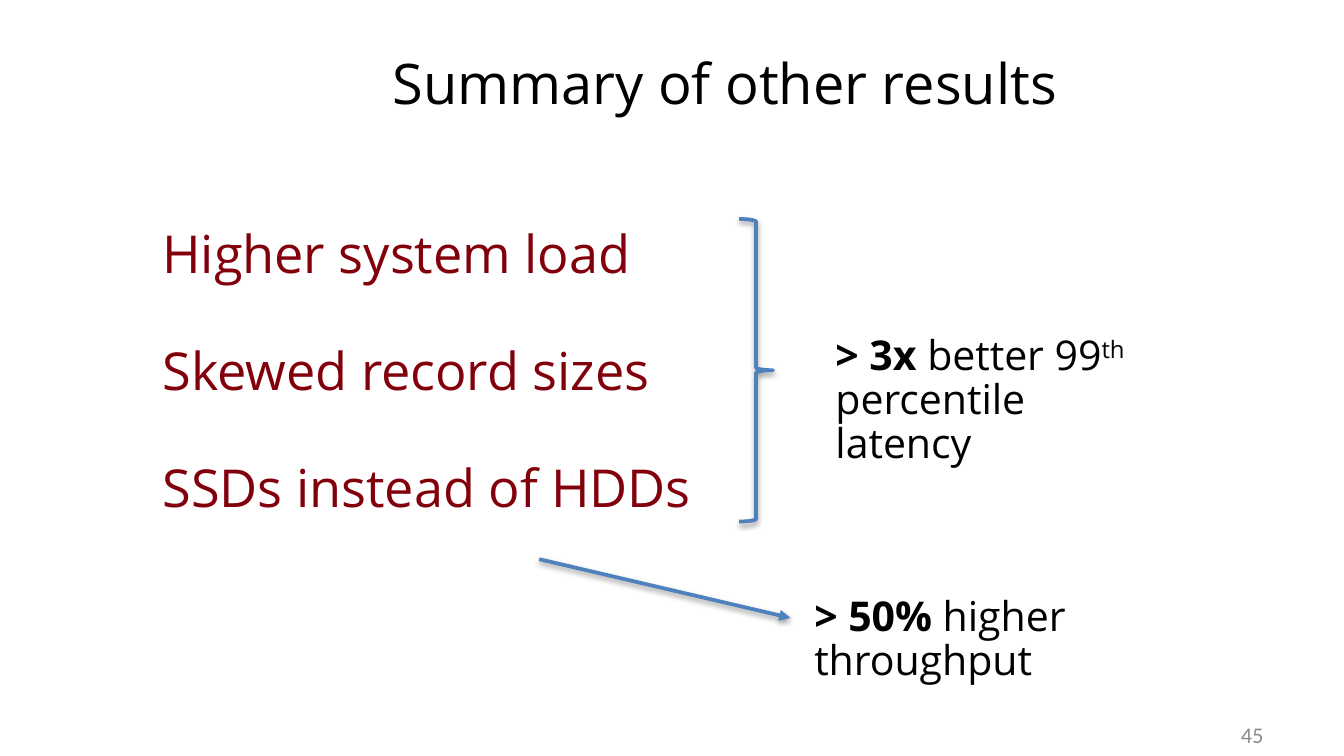
from pptx import Presentation
from pptx.dml.color import RGBColor
from pptx.enum import shapes, text
from pptx.oxml import parse_xml
from pptx.oxml.ns import nsdecls
from pptx.util import Cm, Pt

HUES = {"ink": "000000", "red": "82000B", "blue": "4F81BD", "grey": "8C8C8C"}


def style(run, size, hue="ink", font="Open Sans", bold=False):
    run.font.size = Pt(size)
    run.font.name = font
    run.font.bold = bold
    run.font.color.rgb = RGBColor.from_string(HUES[hue])


def stroke(item):
    """Give a shape or connector the blue line with a soft shadow."""
    item.line.color.rgb = RGBColor.from_string(HUES["blue"])
    item.line.width = Pt(2)
    item._element.spPr.append(parse_xml(
        f'<a:effectLst {nsdecls("a")}><a:outerShdw blurRad="40000" dist="20000" '
        'dir="5400000" rotWithShape="0"><a:srgbClr val="000000">'
        '<a:alpha val="38000"/></a:srgbClr></a:outerShdw></a:effectLst>'))


deck = Presentation()
deck.slide_width, deck.slide_height = Cm(25.4), Cm(14.29)
slide = deck.slides.add_slide(deck.slide_layouts[5])
parts = slide.shapes

# Title
title = parts.title
title.left, title.top, title.width, title.height = Cm(3.63), Cm(0.86), Cm(20.14), Cm(1.55)
frame = title.text_frame
frame.text = "Summary of other results"
frame.auto_size = text.MSO_AUTO_SIZE.NONE
frame.vertical_anchor = text.MSO_ANCHOR.TOP
frame.margin_top = Cm(0.05)
frame.paragraphs[0].alignment = text.PP_ALIGN.CENTER
style(frame.paragraphs[0].runs[0], 30)

# Page number
frame = parts.add_textbox(Cm(18.21), Cm(13.51), Cm(5.92), Cm(0.76)).text_frame
frame.text = "45"
frame.word_wrap = True
frame.vertical_anchor = text.MSO_ANCHOR.MIDDLE
frame.paragraphs[0].alignment = text.PP_ALIGN.RIGHT
style(frame.paragraphs[0].runs[0], 12, "grey", "Calibri")

# Scenarios
frame = parts.add_textbox(Cm(2.82), Cm(4.14), Cm(11.15), Cm(6.25)).text_frame
frame.text = "Higher system load\nSkewed record sizes\nSSDs instead of HDDs"
frame.word_wrap = True
frame.margin_top = Cm(0.05)
for row, para in enumerate(frame.paragraphs):
    para.space_before = Pt(29 if row else 0)
    style(para.runs[0], 28, "red")

# Brace and arrow
brace = parts.add_shape(shapes.MSO_SHAPE.RIGHT_BRACE, Cm(13.97), Cm(4.14), Cm(0.64), Cm(5.72))
brace.fill.background()
stroke(brace)

arrow = parts.add_connector(shapes.MSO_CONNECTOR.STRAIGHT,
                            Cm(10.19), Cm(10.57), Cm(14.94), Cm(11.68))
stroke(arrow)
arrow.line._get_or_add_ln().append(parse_xml(f'<a:tailEnd {nsdecls("a")} type="triangle"/>'))

# Gains: box, top inset, lines of (wording, bold, raised)
gains = [
    ((15.54, 5.23, 6.99, 3.07), 1.12,
     [[("> 3x ", True, False), ("better 99", False, False), ("th", False, True)],
      [("percentile latency", False, False)]]),
    ((15.14, 11.1, 9.37, 1.19), 0.18,
     [[("> 50%", True, False), (" higher throughput", False, False)]]),
]
for box, inset, lines in gains:
    frame = parts.add_textbox(*map(Cm, box)).text_frame
    frame.word_wrap = True
    frame.margin_top = Cm(inset)
    frame.margin_right = Cm(0.5)
    for row, line in enumerate(lines):
        para = frame.add_paragraph() if row else frame.paragraphs[0]
        para.line_spacing = 0.89
        for words, bold, raised in line:
            run = para.add_run()
            run.text = words
            style(run, 22, bold=bold)
            if raised:
                run.font._element.set("baseline", "30000")

deck.save("out.pptx")
